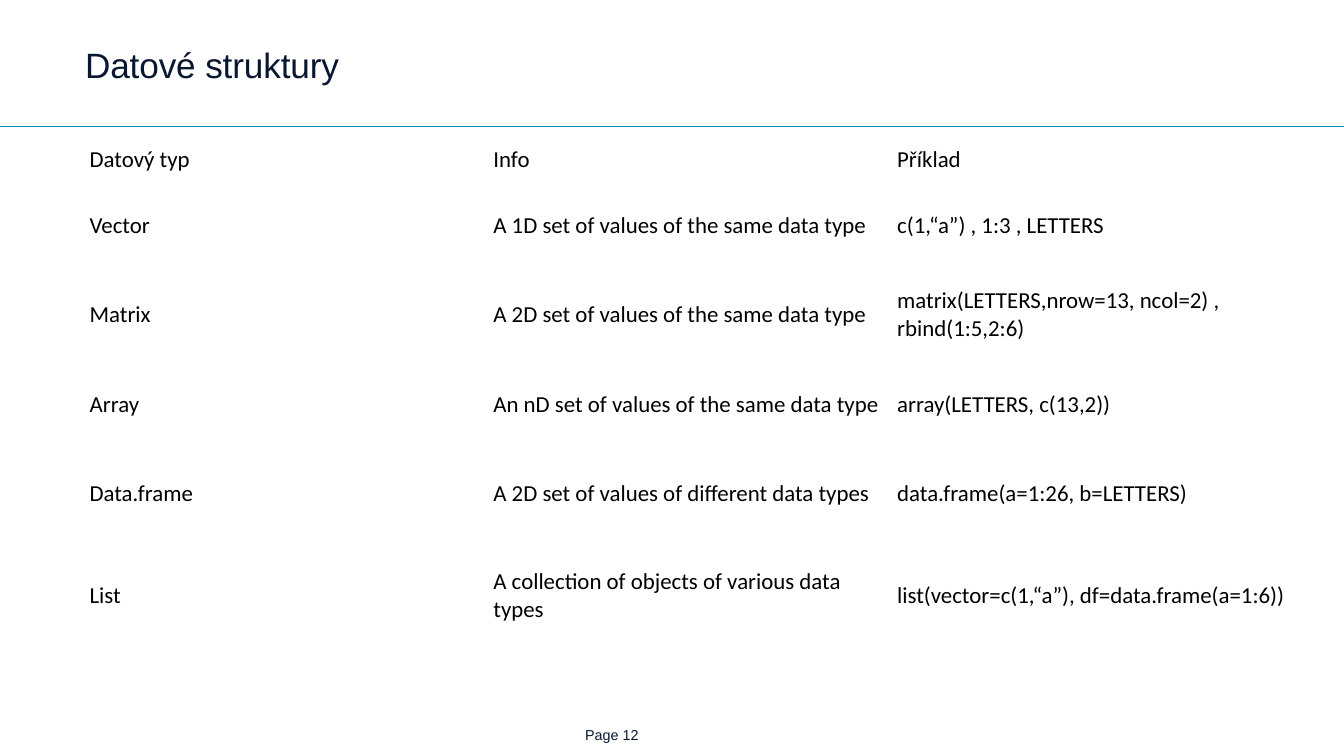
from dataclasses import dataclass

from lxml import etree
from pptx import Presentation
from pptx.dml.color import RGBColor
from pptx.enum.shapes import MSO_CONNECTOR
from pptx.enum.text import MSO_ANCHOR
from pptx.oxml.ns import qn
from pptx.slide import Slide
from pptx.text.text import TextFrame
from pptx.util import Inches, Pt

STRAIGHT = MSO_CONNECTOR.STRAIGHT
TOP, MIDDLE, BOTTOM = MSO_ANCHOR.TOP, MSO_ANCHOR.MIDDLE, MSO_ANCHOR.BOTTOM


@dataclass(frozen=True)
class Theme:
    navy: str = "0A1731"
    black: str = "000000"
    rule: str = "008CA8"
    heading_font: str = "Arial"
    table_font: str = "Calibri"
    title_size: float = 27.7
    table_size: float = 18
    footer_size: float = 11.3


@dataclass(frozen=True)
class Structure:
    name: str
    info: str
    example: str
    height: float


THEME = Theme()
SLIDE_W, SLIDE_H = 14.7, 8.27
LEFT, CONTENT_W = 0.93, 13.25
RULE_Y = 1.38
TABLE_TOP = 1.45
COLUMNS = 3

STRUCTURES = [
    Structure("Datový typ", "Info", "Příklad", 0.59),
    Structure("Vector", "A 1D set of values of the same data type",
              "c(1,“a”) , 1:3 , LETTERS", 0.85),
    Structure("Matrix", "A 2D set of values of the same data type",
              "matrix(LETTERS,nrow=13, ncol=2) , rbind(1:5,2:6)", 1.11),
    Structure("Array", "An nD set of values of the same data type",
              "array(LETTERS, c(13,2))", 0.85),
    Structure("Data.frame", "A 2D set of values of different data types",
              "data.frame(a=1:26, b=LETTERS)", 1.11),
    Structure("List", "A collection of objects of various data types",
              "list(vector=c(1,“a”), df=data.frame(a=1:6))", 1.11),
]


def write_text(tf: TextFrame, text: str, *, font: str, size: float, color: str,
               line_spacing: float | None = None, tracking: float = 0) -> None:
    """Fill a text frame with one run; tracking is in points."""
    p = tf.paragraphs[0]
    p.line_spacing = line_spacing
    r = p.add_run()
    r.text = text
    r.font.name = font
    r.font.size = Pt(size)
    r.font.color.rgb = RGBColor.from_string(color)
    if tracking:
        r.font._element.set("spc", str(round(tracking * 100)))


def add_text_frame(s: Slide, left: float, top: float, width: float, height: float,
                   anchor: MSO_ANCHOR) -> TextFrame:
    tf = s.shapes.add_textbox(Inches(left), Inches(top), Inches(width), Inches(height)).text_frame
    tf.word_wrap = True
    tf.vertical_anchor = anchor
    tf.margin_left = tf.margin_right = tf.margin_top = tf.margin_bottom = 0
    return tf


def add_rule(s: Slide) -> None:
    line = s.shapes.add_connector(STRAIGHT, 0, Inches(RULE_Y), Inches(SLIDE_W), Inches(RULE_Y))
    line.line.color.rgb = RGBColor.from_string(THEME.rule)
    line.line.width = Pt(0.75)
    etree.SubElement(line._element.spPr, qn("a:effectLst"))


def add_structure_table(s: Slide) -> None:
    height = sum(structure.height for structure in STRUCTURES)
    table = s.shapes.add_table(len(STRUCTURES), COLUMNS, Inches(LEFT), Inches(TABLE_TOP),
                               Inches(CONTENT_W), Inches(height)).table
    table.first_row = table.horz_banding = False
    for row, structure in zip(table.rows, STRUCTURES):
        row.height = Inches(structure.height)
        texts = (structure.name, structure.info, structure.example)
        for cell, text in zip(row.cells, texts):
            cell.fill.background()
            cell.vertical_anchor = MIDDLE
            cell.margin_left = cell.margin_right = Inches(0.05)
            cell.margin_top = cell.margin_bottom = Inches(0.03)
            write_text(cell.text_frame, text, font=THEME.table_font,
                       size=THEME.table_size, color=THEME.black)


def main() -> None:
    prs = Presentation()
    prs.slide_width, prs.slide_height = Inches(SLIDE_W), Inches(SLIDE_H)
    s = prs.slides.add_slide(prs.slide_layouts[6])
    add_rule(s)
    add_structure_table(s)
    write_text(add_text_frame(s, LEFT, 0.55, CONTENT_W, 0.7, TOP), "Datové struktury",
               font=THEME.heading_font, size=THEME.title_size, color=THEME.navy,
               line_spacing=0.85, tracking=-0.1)
    write_text(add_text_frame(s, 6.4, 7.97, 0.92, 0.16, BOTTOM), "Page 12",
               font=THEME.heading_font, size=THEME.footer_size, color=THEME.navy)
    prs.save("out.pptx")


if __name__ == "__main__":
    main()
